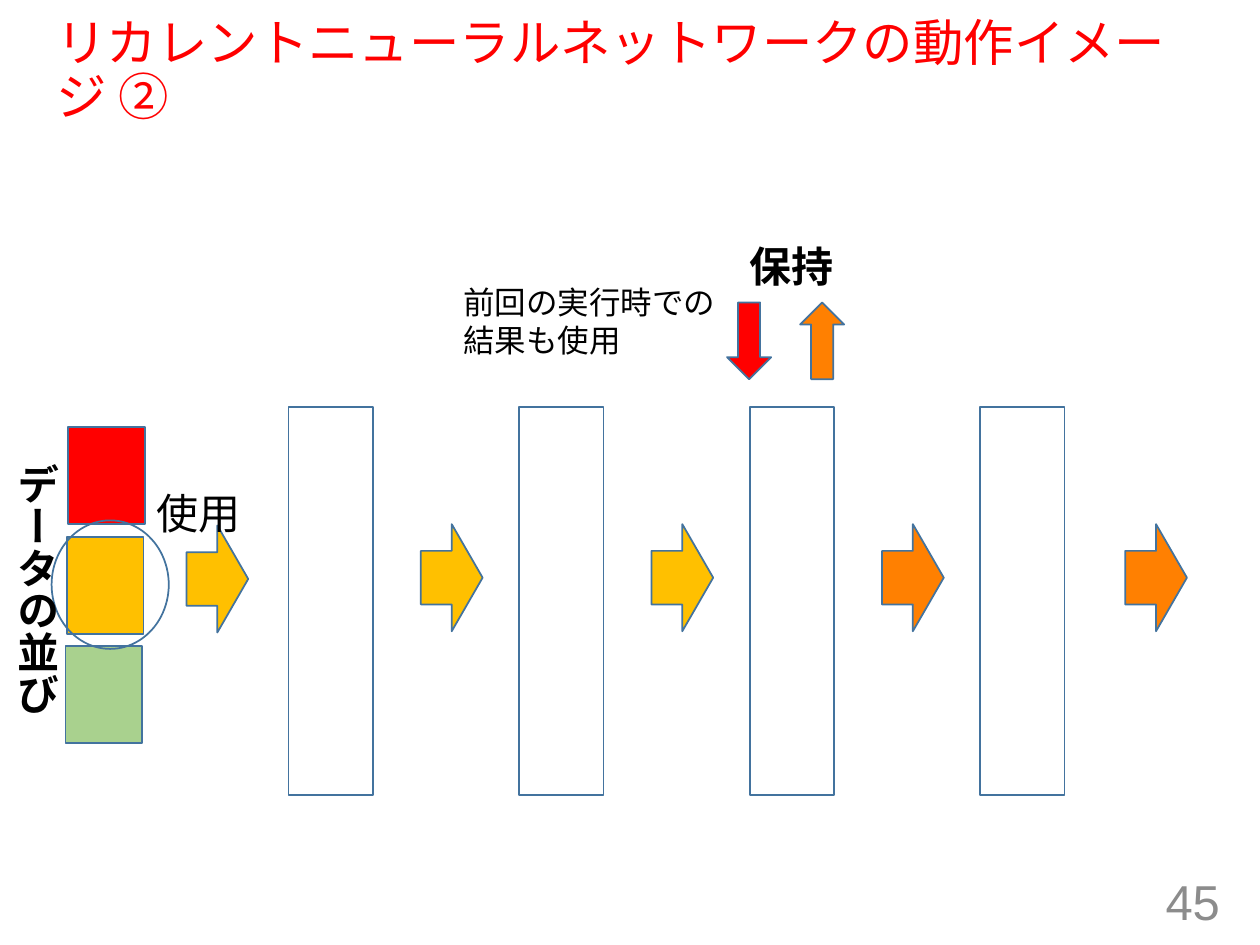
"""Build the slide on how a recurrent neural network carries its previous result."""
import pptx
import pptx.dml.color
import pptx.enum.shapes
import pptx.enum.text
import pptx.util
from dataclasses import dataclass

Inches = pptx.util.Inches
Pt = pptx.util.Pt
Shape = pptx.enum.shapes.MSO_SHAPE
Align = pptx.enum.text.PP_ALIGN
Anchor = pptx.enum.text.MSO_ANCHOR


@dataclass(frozen=True)
class Theme:
    red: str = "FF0000"
    yellow: str = "FFC000"
    orange: str = "FF8001"
    green: str = "A9D18E"
    outline: str = "43739E"
    black: str = "000000"
    grey: str = "8C8C8C"
    heading_font: str = "Arial"
    body_font: str = "Calibri"
    title_size: float = 28.8
    number_size: float = 28
    label_size: float = 24
    note_size: float = 18


def rgb(color):
    return pptx.dml.color.RGBColor.from_string(color)


class SlideBuilder:
    def __init__(self, slide, theme):
        self.slide = slide
        self.theme = theme

    def shape(self, kind, left, top, width, height, fill=None, rotation=0):
        sp = self.slide.shapes.add_shape(
            kind, Inches(left), Inches(top), Inches(width), Inches(height))
        sp.shadow.inherit = False
        sp.rotation = rotation
        if fill:
            sp.fill.solid()
            sp.fill.fore_color.rgb = rgb(fill)
        else:
            sp.fill.background()
        sp.line.color.rgb = rgb(self.theme.outline)
        sp.line.width = Pt(1)

    def flow_arrow(self, left, top, fill):
        self.shape(Shape.RIGHT_ARROW, left, top, 0.49, 0.85, fill)

    def memory_arrow(self, left, fill, rotation):
        self.shape(Shape.RIGHT_ARROW, left, 2.53, 0.61, 0.35, fill, rotation)

    def text(self, left, top, width, height, text, size, color=None, font=None,
             bold=False, align=Align.LEFT, anchor=Anchor.TOP, spacing=1.0,
             wrap=False, vertical=False):
        sp = self.slide.shapes.add_textbox(
            Inches(left), Inches(top), Inches(width), Inches(height))
        tf = sp.text_frame
        tf.word_wrap = wrap
        tf.vertical_anchor = anchor
        if vertical:
            tf._txBody.bodyPr.set("vert", "eaVert")
        tf.text = text
        for p in tf.paragraphs:
            p.alignment = align
            p.line_spacing = spacing
            p.font.size = Pt(size)
            p.font.bold = bold
            p.font.name = font or self.theme.body_font
            p.font.color.rgb = rgb(color or self.theme.black)


def main():
    prs = pptx.Presentation()
    prs.slide_width, prs.slide_height = Inches(10), Inches(7.5)
    theme = Theme()
    s = SlideBuilder(prs.slides.add_slide(prs.slide_layouts[6]), theme)

    s.text(0.35, 0.19, 9.25, 0.77, "リカレントニューラルネットワークの動作イメージ ②",
           theme.title_size, theme.red, theme.heading_font,
           anchor=Anchor.MIDDLE, spacing=0.9, wrap=True)
    s.text(7.53, 6.95, 2.25, 0.4, "45", theme.number_size, theme.grey,
           theme.heading_font, align=Align.RIGHT, anchor=Anchor.MIDDLE, wrap=True)

    layer_left, layer_pitch = 2.29, 1.83
    for i in range(4):
        s.shape(Shape.RECTANGLE, layer_left + i * layer_pitch, 3.23, 0.67, 3.08)
    s.flow_arrow(1.48, 4.17, theme.yellow)
    for i, color in enumerate((theme.yellow, theme.yellow, theme.orange)):
        s.flow_arrow(3.34 + i * layer_pitch, 4.16, color)
    s.flow_arrow(8.93, 4.16, theme.orange)

    for i, color in enumerate((theme.red, theme.yellow, theme.green)):
        s.shape(Shape.RECTANGLE, 0.54 - i * 0.01, 3.39 + i * 0.87, 0.61, 0.77, color)
    s.shape(Shape.OVAL, 0.41, 4.13, 0.93, 1.02)
    s.text(-0.07, 3.58, 0.61, 2.12, "データの並び", theme.label_size,
           bold=True, vertical=True)
    s.text(1.14, 3.82, 0.88, 0.5, "使用", theme.label_size)

    s.memory_arrow(5.64, theme.red, 90)
    s.memory_arrow(6.22, theme.orange, 270)
    s.text(5.85, 1.86, 0.88, 0.5, "保持", theme.label_size, bold=True)
    s.text(3.58, 2.2, 2.22, 0.71, "前回の実行時での\n結果も使用", theme.note_size)

    prs.save("out.pptx")


if __name__ == "__main__":
    main()
